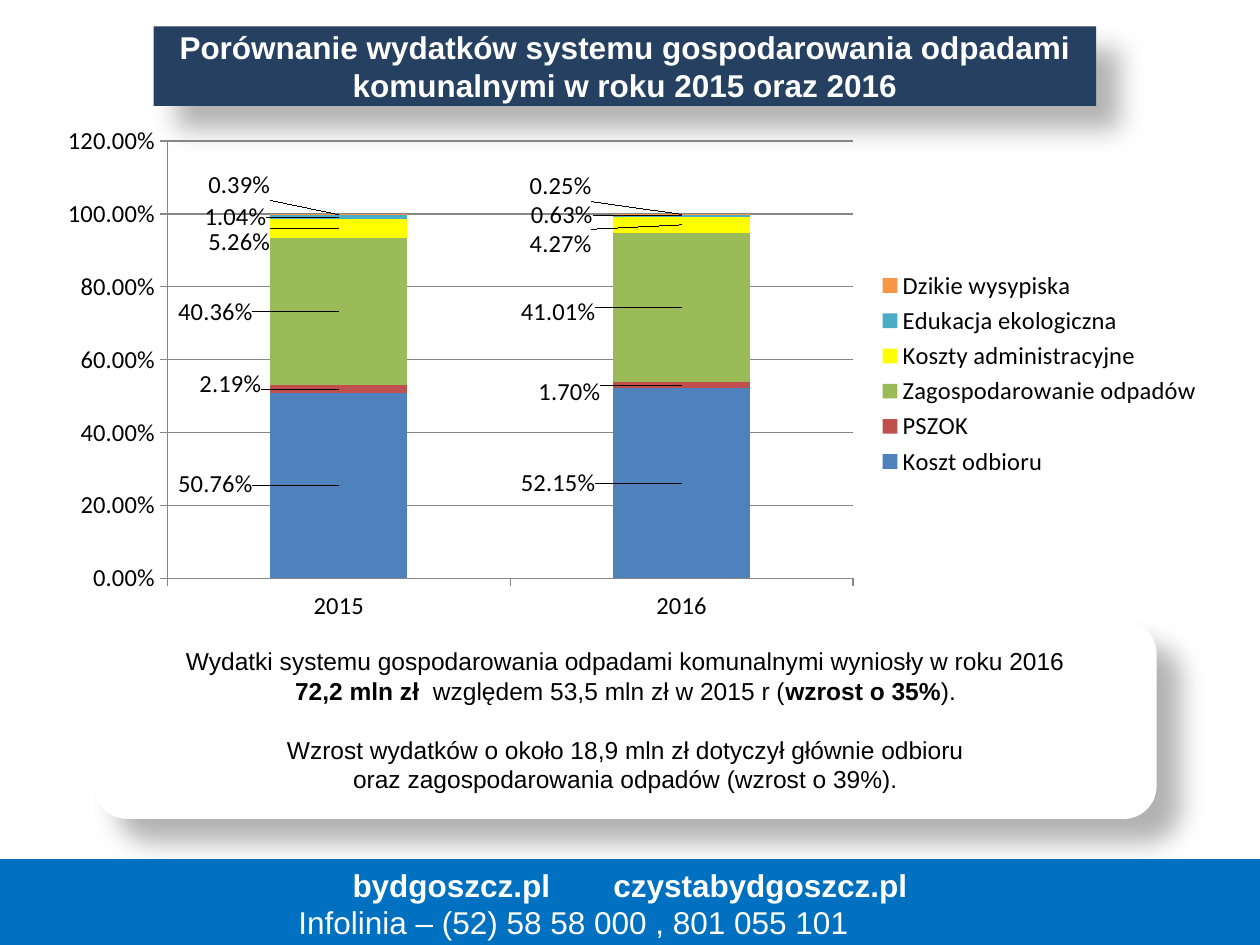
from pptx import Presentation
from pptx import util as u
from pptx.chart.data import CategoryChartData
from pptx.dml.color import RGBColor
from pptx.enum import chart as charts, shapes, text
from pptx.oxml import parse_xml
from pptx.oxml.ns import nsdecls, qn

NAVY = RGBColor(0x25, 0x40, 0x61)
BLUE = RGBColor(0x00, 0x70, 0xC0)
WHITE = RGBColor(0xFF, 0xFF, 0xFF)
BLACK = RGBColor(0x00, 0x00, 0x00)
GRID = RGBColor(0x86, 0x86, 0x86)

YEARS = ["2015", "2016"]
# Name, colour, shares per year, label centres per year (inches on the slide)
COSTS = [
    ("Koszt odbioru", RGBColor(0x4F, 0x81, 0xBD),
     (0.5076, 0.5215), ((1.71, 3.84), (4.43, 3.83))),
    ("PSZOK", RGBColor(0xC0, 0x50, 0x4D),
     (0.0219, 0.0170), ((1.83, 3.05), (4.52, 3.11))),
    ("Zagospodarowanie odpadów", RGBColor(0x9B, 0xBB, 0x59),
     (0.4036, 0.4101), ((1.71, 2.48), (4.43, 2.48))),
    ("Koszty administracyjne", RGBColor(0xFF, 0xFF, 0x00),
     (0.0526, 0.0427), ((1.90, 1.92), (4.45, 1.94))),
    ("Edukacja ekologiczna", RGBColor(0x4B, 0xAC, 0xC6),
     (0.0104, 0.0063), ((1.87, 1.72), (4.46, 1.71))),
    ("Dzikie wysypiska", RGBColor(0xF7, 0x96, 0x46),
     (0.0039, 0.0025), ((1.90, 1.47), (4.45, 1.48))),
]
CHART_BOX = (0.35, 0.92, 9.29, 4.09)
PLOT_BOX = (1.33, 1.12, 5.44, 3.47)
AXIS_MAX = 1.2


def manual_layout(inner=False, **fractions):
    """Return a c:layout element with the given chart fractions."""
    modes = ""
    if inner:
        modes = ('<c:layoutTarget val="inner"/>'
                 '<c:xMode val="edge"/><c:yMode val="edge"/>')
    values = "".join(f'<c:{key} val="{value:.4f}"/>'
                     for key, value in fractions.items())
    return parse_xml(f'<c:layout {nsdecls("c")}><c:manualLayout>'
                     f'{modes}{values}</c:manualLayout></c:layout>')


class SlideBuilder:
    font = "Arial"
    chart_font = "Calibri"

    def __init__(self, slide):
        self.slide = slide

    def place(self, shape, box):
        shape.left, shape.top, shape.width, shape.height = map(u.Inches, box)

    def paint(self, shape, fill, line=None):
        shape.fill.solid()
        shape.fill.fore_color.rgb = fill
        if line is None:
            shape.line.fill.background()
        else:
            shape.line.color.rgb = line
            shape.line.width = u.Pt(0.75)
        shape.shadow.inherit = False

    def add_shadow(self, shape):
        effects = shape._element.spPr.find(qn("a:effectLst"))
        effects.append(parse_xml(
            f'<a:outerShdw {nsdecls("a")} blurRad="{u.Pt(15)}" '
            f'dist="{u.Pt(18)}" dir="2700000" algn="tl" rotWithShape="0">'
            '<a:srgbClr val="000000"><a:alpha val="30000"/></a:srgbClr>'
            '</a:outerShdw>'))

    def set_lines(self, shape, lines, size, color, anchor):
        """Fill a shape with text; each line is a list of (text, bold) pairs."""
        frame = shape.text_frame
        frame.word_wrap = True
        frame.auto_size = text.MSO_AUTO_SIZE.NONE
        frame.vertical_anchor = anchor
        for number, line in enumerate(lines):
            paragraph = frame.add_paragraph() if number else frame.paragraphs[0]
            paragraph.alignment = text.PP_ALIGN.CENTER
            for words, bold in line:
                run = paragraph.add_run()
                run.text = words
                run.font.name, run.font.size = self.font, u.Pt(size)
                run.font.bold = bold
                run.font.color.rgb = color
        return frame.paragraphs

    def title(self, words, box):
        shape = self.slide.shapes.title
        self.place(shape, box)
        shape._element.spPr.append(parse_xml(
            f'<a:prstGeom {nsdecls("a")} prst="roundRect"><a:avLst/></a:prstGeom>'))
        self.paint(shape, NAVY)
        self.add_shadow(shape)
        self.set_lines(shape, [[(words, True)]], 18, WHITE, text.MSO_ANCHOR.MIDDLE)

    def card(self, lines, box):
        shape = self.slide.shapes.add_shape(
            shapes.MSO_SHAPE.ROUNDED_RECTANGLE, *map(u.Inches, box))
        self.paint(shape, WHITE)
        self.add_shadow(shape)
        return self.set_lines(shape, lines, 14, BLACK, text.MSO_ANCHOR.MIDDLE)

    def footer(self, lines, box):
        shape = self.slide.shapes.add_shape(
            shapes.MSO_SHAPE.RECTANGLE, *map(u.Inches, box))
        self.paint(shape, BLUE, BLUE)
        return self.set_lines(shape, lines, 18, WHITE, text.MSO_ANCHOR.TOP)

    def stacked_chart(self):
        data = CategoryChartData(number_format="0.00%")
        data.categories = YEARS
        for name, _, shares, _ in COSTS:
            data.add_series(name, shares)
        chart = self.slide.shapes.add_chart(
            charts.XL_CHART_TYPE.COLUMN_STACKED,
            *map(u.Inches, CHART_BOX), data).chart
        chart.has_title = False
        chart.font.name, chart.font.size = self.chart_font, u.Pt(14)
        chart.font.color.rgb = BLACK
        chart.has_legend = True
        chart.legend.position = charts.XL_LEGEND_POSITION.RIGHT
        chart.legend.include_in_layout = False
        self.format_axes(chart)

        # Fixed plot area
        left, top, width, height = CHART_BOX
        plot_left, plot_top, plot_width, plot_height = PLOT_BOX
        plot_area = chart._chartSpace.chart.plotArea
        for layout in plot_area.findall(qn("c:layout")):
            plot_area.remove(layout)
        plot_area.insert(0, manual_layout(
            inner=True, x=(plot_left - left) / width, y=(plot_top - top) / height,
            w=plot_width / width, h=plot_height / height))

        # Columns, with labels moved from the segment centres to their left
        plot = chart.plots[0]
        plot.gap_width, plot.overlap, plot.vary_by_categories = 150, 100, False
        stacked = [0] * len(YEARS)
        for series, (_, color, shares, centres) in zip(plot.series, COSTS):
            series.format.fill.solid()
            series.format.fill.fore_color.rgb = color
            series.data_labels.show_value = True
            for year, (share, (label_x, label_y)) in enumerate(zip(shares, centres)):
                middle = stacked[year] + share / 2
                stacked[year] += share
                segment_x = plot_left + plot_width * (year + 0.5) / len(YEARS)
                segment_y = plot_top + plot_height * (1 - middle / AXIS_MAX)
                label = series.points[year].data_label
                label.position = charts.XL_LABEL_POSITION.CENTER
                element = series._element.findall(".//" + qn("c:dLbl"))[year]
                element.insert(1, manual_layout(
                    x=(label_x - segment_x) / width,
                    y=(label_y - segment_y) / height))

    def format_axes(self, chart):
        value_axis = chart.value_axis
        value_axis.minimum_scale, value_axis.maximum_scale = 0, AXIS_MAX
        value_axis.major_unit = 0.2
        value_axis.tick_labels.number_format = "0.00%"
        value_axis.tick_labels.number_format_is_linked = False
        value_axis.has_major_gridlines = True
        value_axis.major_gridlines.format.line.color.rgb = GRID
        for axis in (value_axis, chart.category_axis):
            axis.format.line.color.rgb = GRID
            axis.major_tick_mark = charts.XL_TICK_MARK.OUTSIDE


def main():
    presentation = Presentation()
    presentation.slide_width, presentation.slide_height = u.Inches(10), u.Inches(7.5)
    builder = SlideBuilder(
        presentation.slides.add_slide(presentation.slide_layouts[5]))

    # Title
    builder.title("Porównanie wydatków systemu gospodarowania odpadami "
                  "komunalnymi w roku 2015 oraz 2016", (1.22, 0.21, 7.48, 0.63))

    # Summary card
    summary = builder.card([
        [("Wydatki systemu gospodarowania odpadami komunalnymi wyniosły w roku 2016",
          False)],
        [("72,2 mln zł  ", True), ("względem 53,5 mln zł w 2015 r (", False),
         ("wzrost o 35%", True), (").", False)],
        [("Wzrost wydatków o około 18,9 mln zł dotyczył głównie odbioru", False)],
        [("oraz zagospodarowania odpadów (wzrost o 39%).", False)],
    ], (0.75, 4.93, 8.43, 1.57))
    summary[2].space_before = u.Pt(17)

    # Cost structure
    builder.stacked_chart()

    # Contact bar
    contact = builder.footer([
        [("bydgoszcz.pl \t czystabydgoszcz.pl", True)],
        [("Infolinia – (52) 58 58 000 , 801 055 101", False)],
    ], (0, 6.82, 10, 0.71))
    contact[1].alignment = text.PP_ALIGN.LEFT
    contact[1]._p.get_or_add_pPr().set("marL", str(u.Inches(2.27)))

    presentation.save("out.pptx")


if __name__ == "__main__":
    main()
